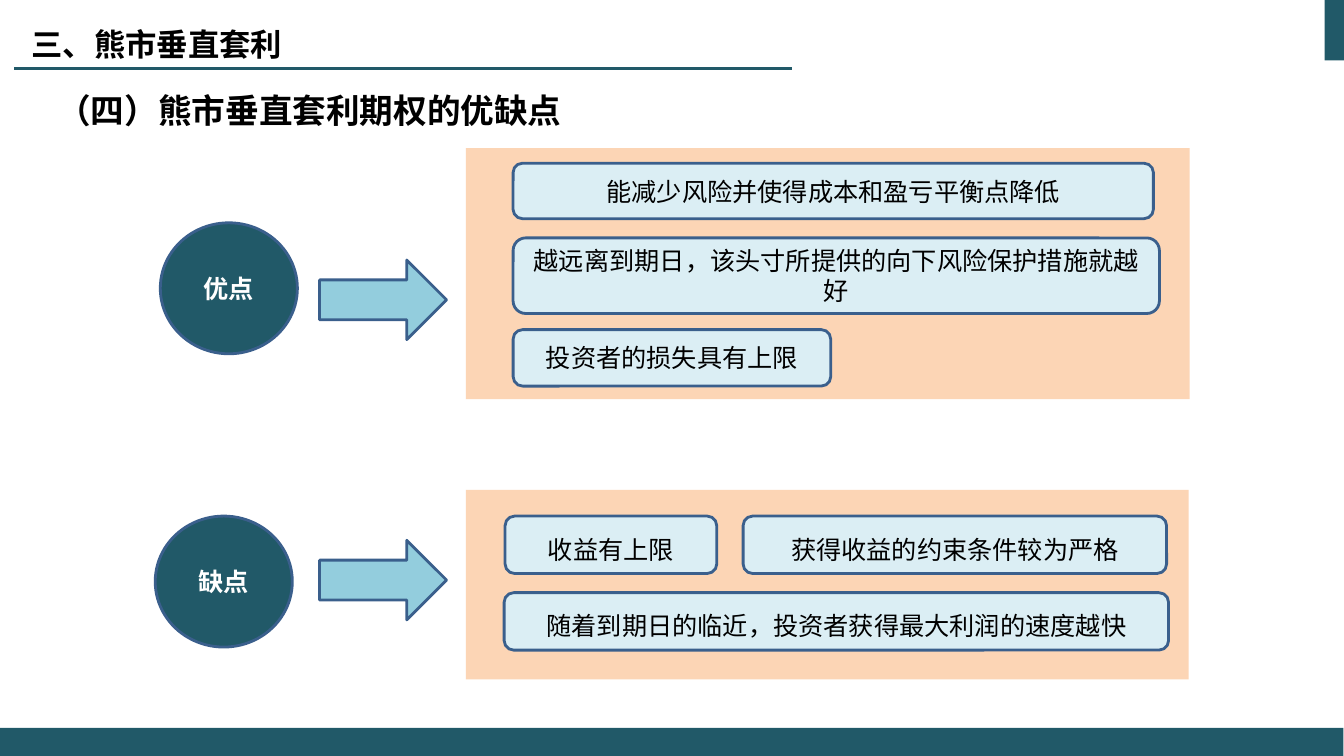
from pptx import Presentation
from pptx.dml.color import RGBColor
from pptx.enum.shapes import MSO_CONNECTOR as LINE, MSO_SHAPE as SHAPE
from pptx.enum.text import MSO_ANCHOR as ANCHOR, MSO_AUTO_SIZE as FIT, PP_ALIGN as ALIGN
from pptx.oxml.ns import qn
from pptx.util import Inches, Pt
from lxml.etree import SubElement

TEAL = RGBColor(0x21, 0x59, 0x68)
PEACH = RGBColor(0xFC, 0xD5, 0xB5)
PALE = RGBColor(0xDB, 0xEE, 0xF4)
SKY = RGBColor(0x93, 0xCD, 0xDD)
EDGE = RGBColor(0x3A, 0x5F, 0x8C)
BLACK = RGBColor(0, 0, 0)
WHITE = RGBColor(0xFF, 0xFF, 0xFF)


class Board:
    serif, sans, cjk = "Times New Roman", "Calibri", "Noto Sans CJK SC"

    def __init__(self, prs):
        self.w, self.h = prs.slide_width, prs.slide_height
        self.s = prs.slides.add_slide(prs.slide_layouts[5])

    def x(self, share):
        return int(self.w * share / 100)

    def y(self, share):
        return int(self.h * share / 100)

    def box(self, x, y, w, h):
        return self.x(x), self.y(y), self.x(w), self.y(h)

    def label(self, sp, text, size, font, color=BLACK, bold=False,
              align=ALIGN.LEFT, anchor=ANCHOR.MIDDLE, spacing=1.0):
        tf = sp.text_frame
        tf.word_wrap, tf.auto_size, tf.vertical_anchor = True, FIT.NONE, anchor
        p = tf.paragraphs[0]
        p.text, p.alignment, p.line_spacing = text, align, spacing
        f = p.font
        f.name, f.size, f.bold = font, Pt(size), bold
        f.color.rgb = color
        return p

    def title(self, text, *at):
        sp = self.s.shapes.title
        sp.left, sp.top, sp.width, sp.height = self.box(*at)
        p = self.label(sp, text, 28, self.cjk, bold=True)
        p.runs[0]._r.get_or_add_rPr().set("cap", "small")

    def subtitle(self, text, *at):
        sp = self.s.shapes.add_textbox(*self.box(*at))
        self.label(sp, text, 24, self.serif, bold=True, anchor=ANCHOR.TOP)

    def rule(self, x1, x2, y):
        c = self.s.shapes.add_connector(
            LINE.STRAIGHT, self.x(x1), self.y(y), self.x(x2), self.y(y))
        c.line.color.rgb, c.line.width = TEAL, Pt(1.5)
        SubElement(c._element.spPr, qn("a:effectLst"))

    def shape(self, kind, fill, *at, edge=True):
        sp = self.s.shapes.add_shape(kind, *self.box(*at))
        sp.shadow.inherit = False
        sp.fill.solid()
        sp.fill.fore_color.rgb = fill
        if edge:
            sp.line.color.rgb, sp.line.width = EDGE, Pt(2)
        else:
            sp.line.fill.background()
        return sp

    def block(self, fill, *at):
        self.shape(SHAPE.RECTANGLE, fill, *at, edge=False)

    def circle(self, text, x, y):
        sp = self.shape(SHAPE.OVAL, TEAL, x, y, 10.2, 17.33)
        self.label(sp, text, 18, self.sans, WHITE, True, ALIGN.CENTER)

    def arrow(self, y):
        self.shape(SHAPE.RIGHT_ARROW, SKY, 23.78, y, 9.45, 10.53)

    def card(self, text, *at, spacing=1.0):
        sp = self.shape(SHAPE.ROUNDED_RECTANGLE, PALE, *at)
        self.label(sp, text, 18, self.serif, align=ALIGN.CENTER, spacing=spacing)


def main():
    prs = Presentation()
    prs.slide_width, prs.slide_height = Inches(13.33), Inches(7.5)
    b = Board(prs)
    b.block(TEAL, 98.57, 0, 1.43, 8)
    b.rule(1.05, 58.96, 9.07)
    b.block(TEAL, 0, 96.27, 99.95, 3.73)
    b.title("三、熊市垂直套利", 1.58, 1.73, 81.6, 7.33)
    b.subtitle("（四）熊市垂直套利期权的优缺点", 3.53, 11.2, 92.7, 7.4)

    b.block(PEACH, 34.66, 19.6, 53.86, 33.2)
    b.circle("优点", 11.93, 29.47)
    b.arrow(34.4)
    for text, y, w, h in (
        ("能减少风险并使得成本和盈亏平衡点降低", 21.6, 47.64, 7.33),
        ("越远离到期日，该头寸所提供的向下风险保护措施就越好", 31.47, 48.09, 10),
        ("投资者的损失具有上限", 43.6, 23.63, 7.47),
    ):
        b.card(text, 38.18, y, w, h)

    b.block(PEACH, 34.66, 64.8, 53.79, 25.07)
    b.circle("缺点", 11.55, 68.27)
    b.arrow(71.47)
    for text, x, y, w in (
        ("收益有上限", 37.58, 68.27, 15.75),
        ("获得收益的约束条件较为严格", 55.29, 68.27, 31.51),
        ("随着到期日的临近，投资者获得最大利润的速度越快", 37.51, 78.4, 49.44),
    ):
        b.card(text, x, y, w, 7.6, spacing=1.3)

    prs.save("out.pptx")


if __name__ == "__main__":
    main()
